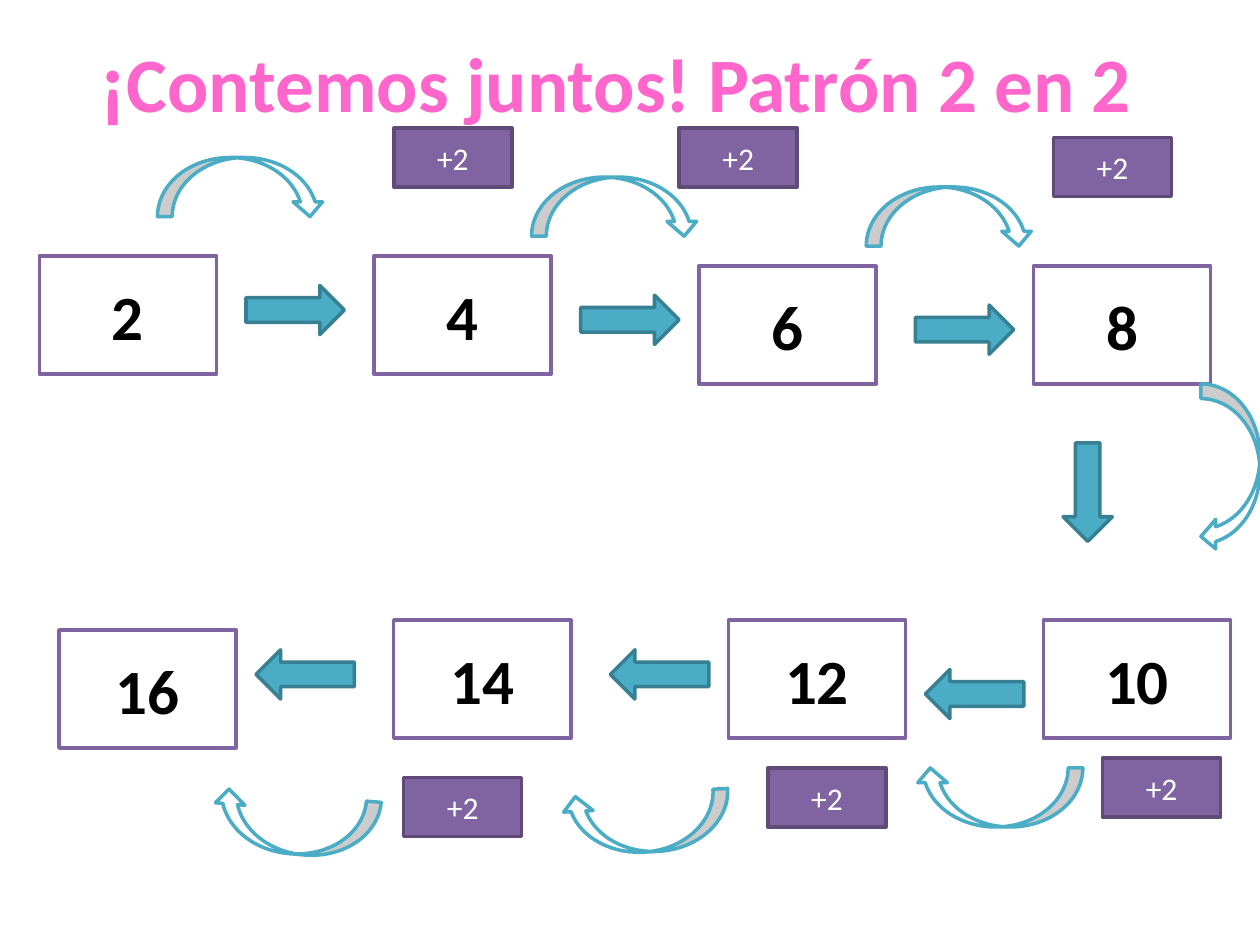
from pptx import Presentation
from pptx.dml.color import RGBColor
from pptx.enum import shapes, text
from pptx.util import Pt

PINK = RGBColor(0xFF, 0x66, 0xCC)
PURPLE = RGBColor(0x80, 0x64, 0xA2)
DARK_PURPLE = RGBColor(0x5F, 0x4A, 0x78)
TEAL = RGBColor(0x4B, 0xAC, 0xC6)
DARK_TEAL = RGBColor(0x37, 0x7F, 0x92)
WHITE = RGBColor(0xFF, 0xFF, 0xFF)
BLACK = RGBColor(0, 0, 0)

RECTANGLE = shapes.MSO_SHAPE.RECTANGLE
ARROW = shapes.MSO_SHAPE.RIGHT_ARROW
CURVE = shapes.MSO_SHAPE.CURVED_DOWN_ARROW
NUMBER_SIZE = (101.25, 67.5)
STEP_SIZE = (67.5, 33.75)
ARROW_SIZE = (56.25, 28.13)
CURVE_SIZE = (95.63, 33.75)


def format_run(run, size, color, bold):
    """Set the font of one run."""
    run.font.name = "Calibri"
    run.font.size = Pt(size)
    run.font.bold = bold
    run.font.color.rgb = color


def add_figure(slide, kind, position, size, fill, line, rotation=0):
    """Add a filled and outlined preset shape."""
    shape = slide.shapes.add_shape(kind, *map(Pt, (*position, *size)))
    shape.shadow.inherit = False
    shape.fill.solid()
    shape.fill.fore_color.rgb = fill
    shape.line.color.rgb = line
    shape.line.width = Pt(2)
    shape.rotation = rotation
    return shape


def add_label(slide, label, position, size, fill, line, font):
    """Add a rectangle with one centred label."""
    shape = add_figure(slide, RECTANGLE, position, size, fill, line)
    frame = shape.text_frame
    frame.text = label
    frame.vertical_anchor = text.MSO_ANCHOR.MIDDLE
    paragraph = frame.paragraphs[0]
    paragraph.alignment = text.PP_ALIGN.CENTER
    format_run(paragraph.runs[0], *font)


def add_arrow(slide, position, rotation=0):
    """Add a block arrow."""
    add_figure(slide, ARROW, position, ARROW_SIZE, TEAL, DARK_TEAL, rotation)


def add_curve(slide, position, rotation=0):
    """Add a curved jump arrow."""
    add_figure(slide, CURVE, position, CURVE_SIZE, WHITE, TEAL, rotation)


def add_title(slide, left, top, width, height):
    """Add the slide title in its box."""
    frame = slide.shapes.add_textbox(*map(Pt, (left, top, width, height))).text_frame
    frame.word_wrap = True
    frame.vertical_anchor = text.MSO_ANCHOR.MIDDLE
    paragraph = frame.paragraphs[0]
    paragraph.alignment = text.PP_ALIGN.CENTER
    for words, size in (("¡", 48), ("Contemos juntos! Patrón 2 en 2", 44)):
        run = paragraph.add_run()
        run.text = words
        format_run(run, size, PINK, True)


def add_row(slide, left, top, numbers, arrows, curves, steps, rotation=0):
    """Add one counting row, with offsets measured from its corner."""
    def place(x, y):
        return left + x, top + y

    for value, x, y, width in numbers:
        add_label(slide, str(value), place(x, y), (width, NUMBER_SIZE[1]),
                  WHITE, PURPLE, (36, BLACK, True))
    for x, y in arrows:
        add_arrow(slide, place(x, y), rotation)
    for x, y, angle in curves:
        add_curve(slide, place(x, y), angle)
    for x, y in steps:
        add_label(slide, "+2", place(x, y), STEP_SIZE,
                  PURPLE, DARK_PURPLE, (18, WHITE, False))


def add_turn(slide, left, top):
    """Add the downward arrows that join the two rows."""
    add_arrow(slide, (left, top + 16.9), 90)
    add_curve(slide, (left + 61.9, top), 90)


def main():
    """Build and save the counting slide."""
    presentation = Presentation()
    presentation.slide_width, presentation.slide_height = Pt(720), Pt(540)
    slide = presentation.slides.add_slide(presentation.slide_layouts[6])
    width = NUMBER_SIZE[0]
    add_title(slide, 28, 0, 648, 90)
    add_row(
        slide, 22.5, 73.1,
        numbers=[(2, 0, 73.1, width), (4, 191.25, 73.1, width),
                 (6, 376.9, 78.8, width), (8, 568.1, 78.8, width)],
        arrows=[(118.1 + 191.25 * i, 90 + 5.63 * i) for i in range(3)],
        curves=[(67.5, 16.9, 0), (281.25, 28.1, 0), (472.5, 33.75, 0)],
        steps=[(202.5, 0), (365.6, 0), (579.4, 5.6)],
    )
    add_turn(slide, 593.4, 250.3)
    add_row(
        slide, 33.75, 354.4,
        numbers=[(10, 562.5, 0, 106.9), (12, 382.5, 0, width),
                 (14, 191.25, 0, width), (16, 0, 5.6, width)],
        arrows=[(495, 28.1), (315, 16.9), (112.5, 16.9)],
        curves=[(489.4, 84.4, 180), (287.4, 98.7, 176.9), (87.1, 99.9, 185)],
        steps=[(596.25, 78.7), (405, 84.4), (196.9, 90)],
        rotation=180,
    )
    presentation.save("out.pptx")


if __name__ == "__main__":
    main()
